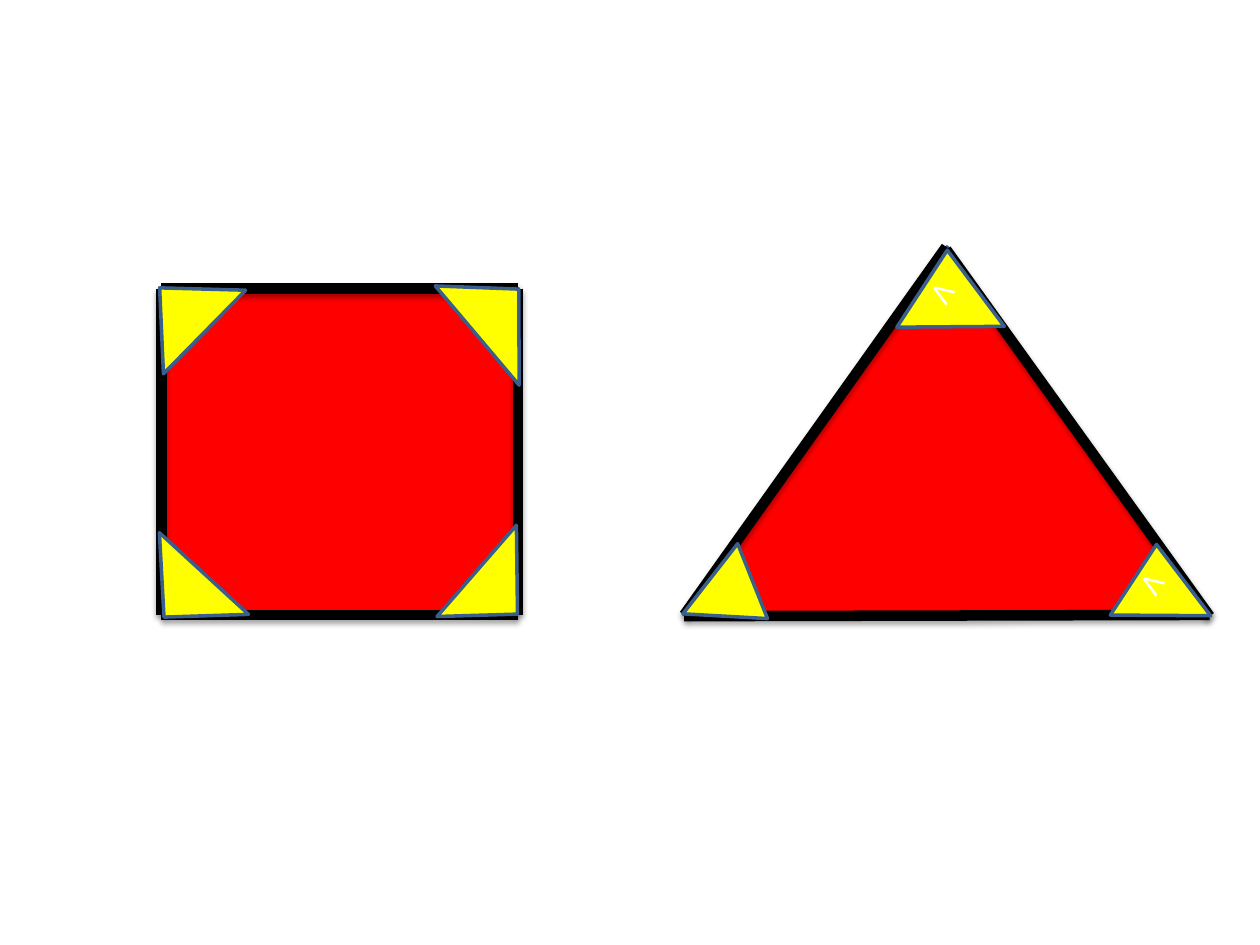
"""Build a slide with a square and a triangle whose corners are marked in yellow."""
from lxml import etree
from pptx import Presentation
from pptx.dml.color import RGBColor
from pptx.enum import shapes, text
from pptx.oxml import ns
from pptx.util import Pt

RED = RGBColor(255, 0, 0)
YELLOW = RGBColor(255, 255, 0)
BLACK = RGBColor(0, 0, 0)
WHITE = RGBColor(255, 255, 255)
BLUE = RGBColor(0x3A, 0x5F, 0x8C)
KIND = shapes.MSO_SHAPE

LEFT, RIGHT, TOP, BASE = 92.2, 295.9, 164.9, 351.4
FIGURES = [
    {
        "kind": KIND.ISOSCELES_TRIANGLE,
        "box": (391, 141.1, 300.2, 210.2),
        "sides": [
            (391, 351.4, 540.7, 141.1),
            (391, 352.1, 691.2, 351.4),
            (540.7, 142.6, 691.2, 352.1),
        ],
        "corners": [
            ((386.6, 318.2, 46.1, 43.9), 248.3, 0.443, ""),
            ((643.7, 320.4, 48.2, 48.2), 123.2, 0.355, "V"),
            ((522, 153.4, 52.6, 51.1), 123.2, 0.355, "V"),
        ],
    },
    {
        "kind": KIND.RECTANGLE,
        "box": (LEFT, TOP, RIGHT - LEFT, 185.8),
        "sides": [
            (LEFT, TOP, LEFT, BASE),
            (RIGHT, BASE, LEFT, BASE),
            (RIGHT, TOP, RIGHT, BASE),
            (RIGHT, TOP, LEFT, TOP),
        ],
        "corners": [
            ((70.6, 159.1, 67, 36), 314.5, 0.5, ""),
            ((249.1, 162.7, 74.2, 35.3), 49.8, 0.434, ""),
            ((70.6, 323.3, 69.1, 33.8), 222.5, 0.5, ""),
            ((250.6, 320.4, 69.1, 33.8), 131, 0.549, ""),
        ],
    },
]


def put_text(shape, words, size=18, color=WHITE, font="Calibri"):
    frame = shape.text_frame
    frame.vertical_anchor = text.MSO_ANCHOR.MIDDLE
    para = frame.paragraphs[0]
    para.alignment = text.PP_ALIGN.CENTER
    run = para.add_run()
    run.text = words
    run.font.size = Pt(size)
    run.font.name = font
    run.font.color.rgb = color


def add_form(slide, kind, box, fill):
    form = slide.shapes.add_shape(kind, *map(Pt, box))
    form.shadow.inherit = False
    form.fill.solid()
    form.fill.fore_color.rgb = fill
    form.line.color.rgb = BLUE
    form.line.width = Pt(2)
    return form


def add_shade(side):
    props = side._element.spPr
    list_el = etree.SubElement(props, ns.qn("a:effectLst"))
    shade = etree.SubElement(
        list_el, ns.qn("a:outerShdw"), blurRad=str(Pt(3.1)),
        dist=str(Pt(1.8)), dir="5400000", rotWithShape="0")
    color = etree.SubElement(shade, ns.qn("a:srgbClr"), val=str(BLACK))
    etree.SubElement(color, ns.qn("a:alpha"), val="35000")


def add_side(slide, ends):
    side = slide.shapes.add_connector(
        shapes.MSO_CONNECTOR.STRAIGHT, *map(Pt, ends))
    side.line.color.rgb = BLACK
    side.line.width = Pt(6)
    add_shade(side)


def add_corner(slide, box, turn, peak, words):
    corner = add_form(slide, KIND.ISOSCELES_TRIANGLE, box, YELLOW)
    corner.adjustments[0] = peak
    corner.rotation = turn
    if words:
        put_text(corner, words)


def main():
    deck = Presentation()
    deck.slide_width, deck.slide_height = Pt(720), Pt(540)
    slide = deck.slides.add_slide(deck.slide_layouts[6])
    for figure in FIGURES:
        add_form(slide, figure["kind"], figure["box"], RED)
        for ends in figure["sides"]:
            add_side(slide, ends)
        for corner in figure["corners"]:
            add_corner(slide, *corner)
    deck.save("out.pptx")


if __name__ == "__main__":
    main()
